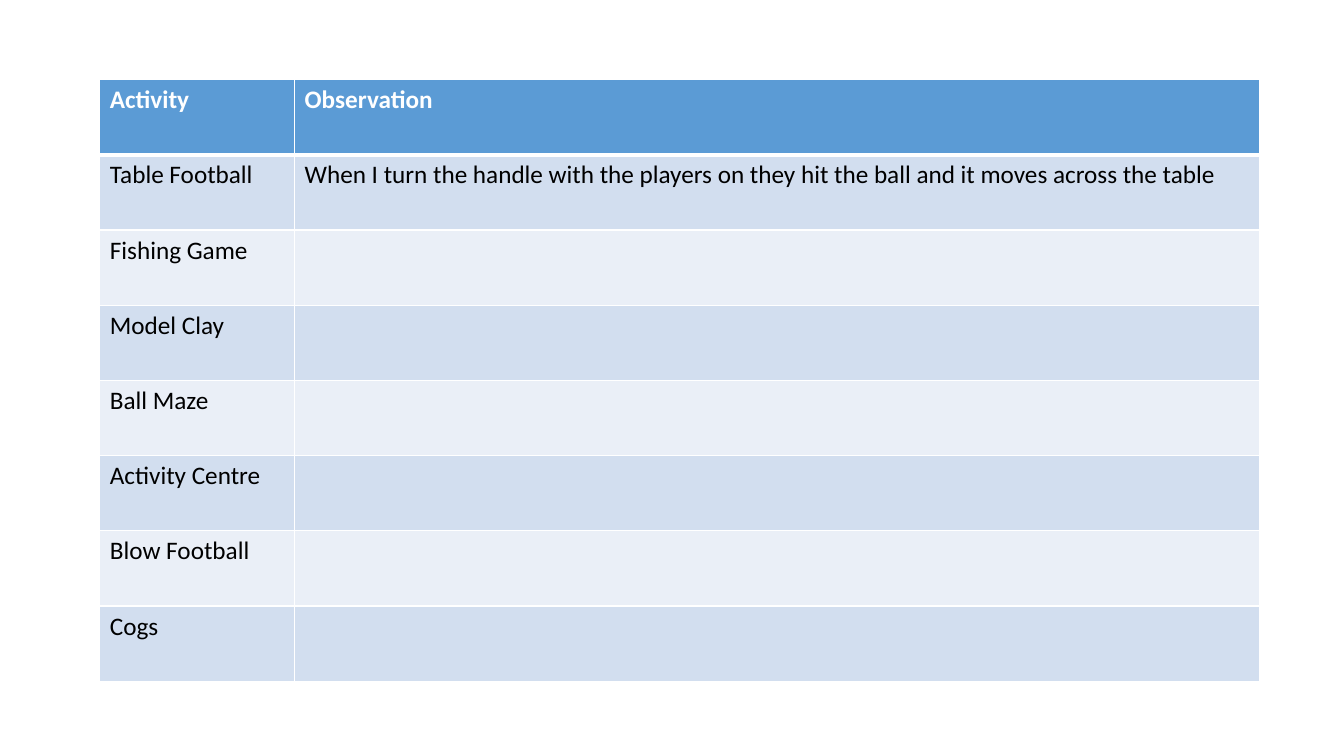
from lxml import etree
from pptx import Presentation
from pptx.dml.color import RGBColor
from pptx.oxml.ns import qn
from pptx.util import Inches, Pt

WHITE = RGBColor(0xFF, 0xFF, 0xFF)
BLACK = RGBColor(0x00, 0x00, 0x00)
HEADER_BLUE = RGBColor(0x5B, 0x9B, 0xD5)
BAND_DARK = RGBColor(0xD2, 0xDE, 0xEF)
BAND_LIGHT = RGBColor(0xEA, 0xEF, 0xF7)

BLANK_LAYOUT = 6
ACTIVITY_SHARE = 0.168
THIN, THICK = Pt(1), Pt(3)

OBSERVATIONS = [
    ("Activity", "Observation"),
    ("Table Football",
     "When I turn the handle with the players on they hit the ball and it moves across the table"),
    ("Fishing Game", ""),
    ("Model Clay", ""),
    ("Ball Maze", ""),
    ("Activity Centre", ""),
    ("Blow Football", ""),
    ("Cogs", ""),
]


def write_text(frame, text, *, size=18, color=BLACK, bold=False, font="Calibri"):
    paragraph = frame.paragraphs[0]
    paragraph.font.size = Pt(size)
    if text:
        run = paragraph.add_run()
        run.text = text
        run.font.name = font
        run.font.size = Pt(size)
        run.font.bold = bold
        run.font.color.rgb = color


def draw_borders(cell, *, top=THIN, bottom=THIN):
    properties = cell._tc.get_or_add_tcPr()
    sides = {"a:lnL": THIN, "a:lnR": THIN, "a:lnT": top, "a:lnB": bottom}
    for side, width in sides.items():
        line = etree.SubElement(properties, qn(side), w=str(width))
        fill = etree.SubElement(line, qn("a:solidFill"))
        etree.SubElement(fill, qn("a:srgbClr"), val=str(WHITE))


def add_observation_table(slide, left, top, width, height):
    table = slide.shapes.add_table(
        len(OBSERVATIONS), len(OBSERVATIONS[0]), left, top, width, height).table
    activity_width = int(width * ACTIVITY_SHARE)
    table.columns[0].width = activity_width
    table.columns[1].width = width - activity_width

    for row, entries in enumerate(OBSERVATIONS):
        is_header = row == 0
        band = BAND_DARK if row % 2 else BAND_LIGHT
        for column, entry in enumerate(entries):
            cell = table.cell(row, column)
            draw_borders(cell,
                         top=THICK if row == 1 else THIN,
                         bottom=THICK if is_header else THIN)
            cell.fill.solid()
            cell.fill.fore_color.rgb = HEADER_BLUE if is_header else band
            write_text(cell.text_frame, entry, bold=is_header,
                       color=WHITE if is_header else BLACK)


def main():
    presentation = Presentation()
    presentation.slide_width = Inches(13.33)
    presentation.slide_height = Inches(7.5)
    slide = presentation.slides.add_slide(presentation.slide_layouts[BLANK_LAYOUT])
    add_observation_table(slide, Inches(0.99), Inches(0.79), Inches(11.5), Inches(5.97))
    presentation.save("out.pptx")


if __name__ == "__main__":
    main()
